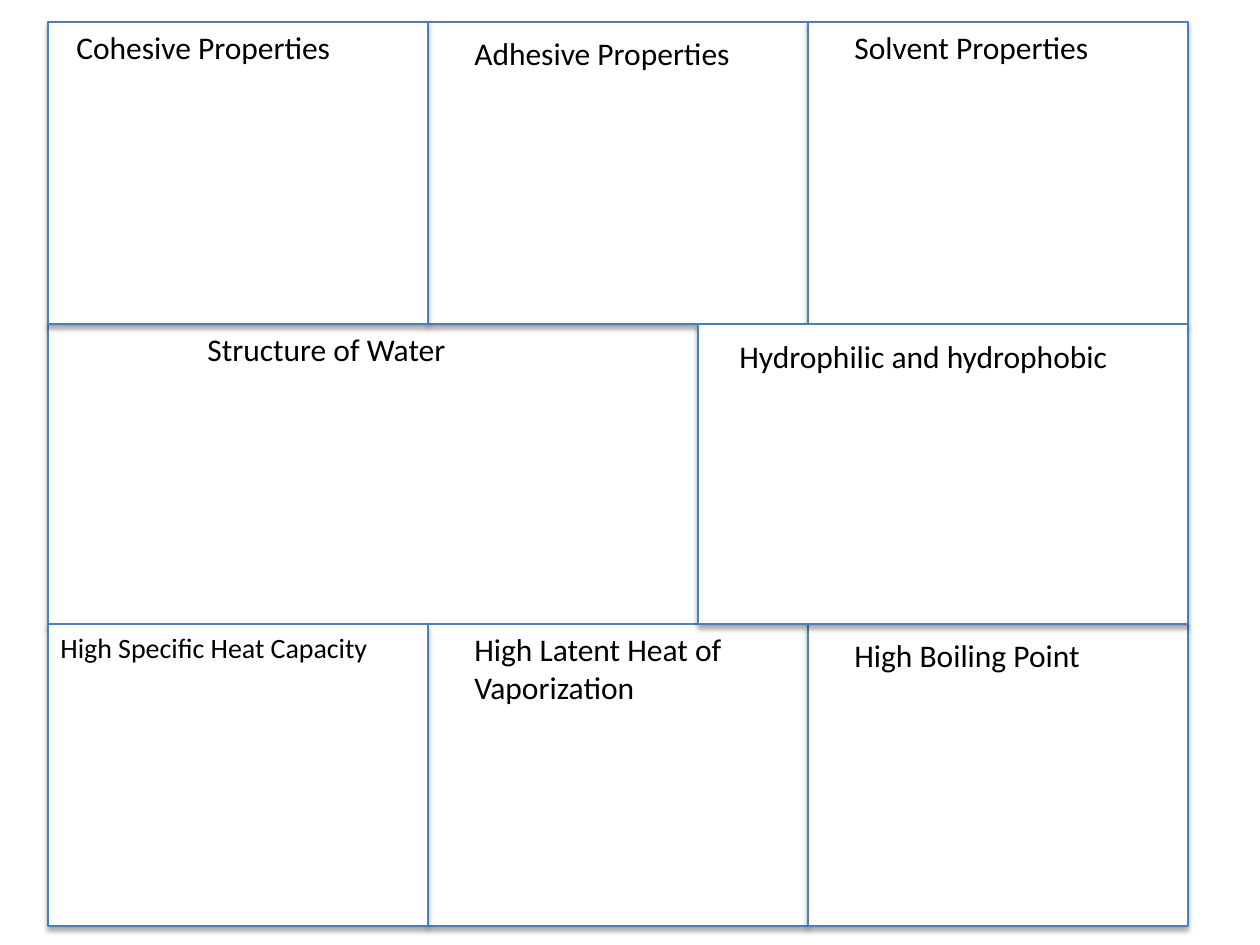
import lxml.etree
import pptx
import pptx.dml.color
import pptx.enum.shapes
import pptx.enum.text
import pptx.oxml.ns
import pptx.util

EMU_PER_PX = 914400 / 126
COLUMNS = (48, 428, 808)
ROWS = (22, 324, 624)
CELL_WIDTH, CELL_HEIGHT = 380, 302
RIGHT = COLUMNS[-1] + CELL_WIDTH
SPLIT = 698  # boundary between the two middle panels


def px(value):
    return pptx.util.Emu(round(value * EMU_PER_PX))


def color(value):
    return pptx.dml.color.RGBColor.from_string(value)


class Board:
    """Holds the style and the current slide."""

    fill, line, text = "FFFFFF", "4B7EBC", "000000"
    line_width = 0.75
    font = "Calibri"

    def __init__(self, slide):
        self.slide = slide

    def panel(self, left, top, width=CELL_WIDTH, height=CELL_HEIGHT):
        shape = self.slide.shapes.add_shape(
            pptx.enum.shapes.MSO_SHAPE.RECTANGLE, px(left), px(top), px(width), px(height))
        shape.fill.solid()
        shape.fill.fore_color.rgb = color(self.fill)
        shape.line.color.rgb = color(self.line)
        shape.line.width = pptx.util.Pt(self.line_width)
        self.shadow(shape)

    def shadow(self, shape):
        """Give the shape a soft shadow straight below it."""
        shape.shadow.inherit = False
        qn = pptx.oxml.ns.qn
        effects = shape._element.spPr.find(qn("a:effectLst"))
        outer = lxml.etree.SubElement(
            effects, qn("a:outerShdw"), blurRad=str(pptx.util.Pt(3.1)),
            dist=str(pptx.util.Pt(1.8)), dir="5400000", rotWithShape="0")
        black = lxml.etree.SubElement(outer, qn("a:srgbClr"), val="000000")
        lxml.etree.SubElement(black, qn("a:alpha"), val="35000")

    def label(self, text, left, top, width, height=50, size=18, wrap=False):
        shape = self.slide.shapes.add_textbox(px(left), px(top), px(width), px(height))
        frame = shape.text_frame
        frame.word_wrap = wrap
        frame.auto_size = pptx.enum.text.MSO_AUTO_SIZE.SHAPE_TO_FIT_TEXT
        run = frame.paragraphs[0].add_run()
        run.text = text
        run.font.color.rgb = color(self.text)
        for name, value in {"name": self.font, "size": pptx.util.Pt(size)}.items():
            setattr(run.font, name, value)


def main():
    presentation = pptx.Presentation()
    presentation.slide_width, presentation.slide_height = px(1260), px(945)
    board = Board(presentation.slides.add_slide(presentation.slide_layouts[6]))

    top, middle, bottom = ROWS
    first, second, third = COLUMNS
    board.panel(first, middle, SPLIT - first)
    for left, row in ((second, bottom), (second, top), (third, bottom),
                      (first, bottom), (third, top), (first, top)):
        board.panel(left, row)

    board.label("Structure of Water", 195, middle, 305)
    board.label("Cohesive Properties", first + 16, top, 330)
    board.label("Adhesive Properties", second + 34, top + 6, 330)
    board.label("Solvent Properties", third + 34, top, 304)
    board.label("High Specific Heat Capacity", first, bottom, 400, 47, size=16)
    board.label("High Latent Heat of Vaporization", second + 34, bottom, 315, 89, wrap=True)
    board.label("High Boiling Point", third + 34, bottom + 6, 301)

    board.panel(SPLIT, middle, RIGHT - SPLIT, bottom - middle)
    board.label("Hydrophilic and hydrophobic", SPLIT + 29, middle + 7, 483)
    presentation.save("out.pptx")


if __name__ == "__main__":
    main()
